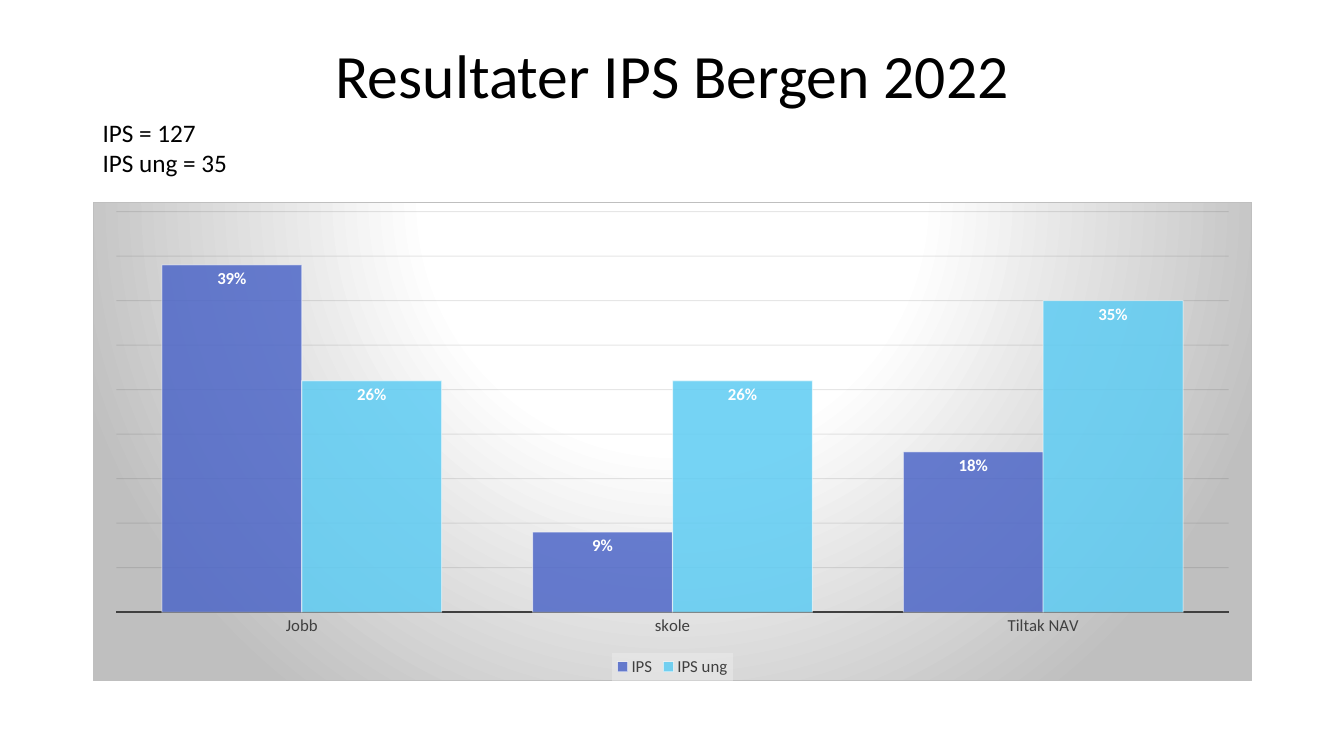
from lxml import etree
from pptx import Presentation
from pptx.chart.data import CategoryChartData
from pptx.dml.color import RGBColor
from pptx.enum.chart import (XL_CHART_TYPE, XL_LABEL_POSITION,
                             XL_LEGEND_POSITION, XL_TICK_LABEL_POSITION,
                             XL_TICK_MARK)
from pptx.enum.text import MSO_ANCHOR, PP_ALIGN
from pptx.oxml import parse_xml
from pptx.oxml.ns import nsdecls, qn
from pptx.util import Inches, Pt

FONT = "Calibri"
LEFT, WIDTH = 0.92, 11.5
CATEGORIES = ["Jobb", "skole", "Tiltak NAV"]
SERIES = [
    ("IPS", [0.39, 0.09, 0.18], "4E67C8"),
    ("IPS ung", [0.26, 0.26, 0.35], "5ECCF3"),
]


def rgb(color):
    return RGBColor.from_string(color)


def style_font(font, size, color, bold=False):
    font.name = FONT
    font.size = Pt(size)
    font.bold = bold
    font.color.rgb = rgb(color)


def style_line(line, color, width):
    line.color.rgb = rgb(color)
    line.width = Pt(width)


def set_opacity(element, *percentages):
    """Give the colours inside element, in order, their opacity."""
    for color, percent in zip(element.iter(qn("a:srgbClr")), percentages):
        etree.SubElement(color, qn("a:alpha")).set("val", str(percent * 1000))


def add_text(slide, box, lines, size, align=PP_ALIGN.LEFT, line_spacing=1.0):
    shape = slide.shapes.add_textbox(*(Inches(value) for value in box))
    frame = shape.text_frame
    frame.word_wrap = True
    frame.vertical_anchor = MSO_ANCHOR.TOP
    for index, line in enumerate(lines):
        paragraph = frame.add_paragraph() if index else frame.paragraphs[0]
        paragraph.alignment = align
        paragraph.line_spacing = line_spacing
        run = paragraph.add_run()
        run.text = line
        style_font(run.font, size, "000000")


def style_series(series, color):
    series.format.fill.solid()
    series.format.fill.fore_color.rgb = rgb(color)
    style_line(series.format.line, "FFFFFF", 0.75)
    set_opacity(series._element.find(qn("c:spPr")), 85, 50)
    labels = series.data_labels
    labels.show_value = True
    labels.position = XL_LABEL_POSITION.INSIDE_END
    labels.number_format = "0%"
    labels.number_format_is_linked = False
    style_font(labels.font, 12, "FFFFFF", bold=True)


def style_axes(chart):
    category_axis = chart.category_axis
    category_axis.major_tick_mark = XL_TICK_MARK.NONE
    category_axis.minor_tick_mark = XL_TICK_MARK.NONE
    category_axis.tick_label_position = XL_TICK_LABEL_POSITION.NEXT_TO_AXIS
    style_font(category_axis.tick_labels.font, 12, "404040")
    style_line(category_axis.format.line, "404040", 1.5)

    value_axis = chart.value_axis
    value_axis.visible = False
    value_axis.minimum_scale = 0
    value_axis.maximum_scale = 0.45
    value_axis.major_unit = 0.05
    value_axis.tick_labels.number_format = "0%"
    value_axis.tick_labels.number_format_is_linked = False
    value_axis.has_major_gridlines = True
    style_line(value_axis.major_gridlines.format.line, "0D0D0D", 0.75)
    set_opacity(value_axis._element.find(qn("c:majorGridlines")), 10)


def style_legend(chart):
    chart.has_legend = True
    legend = chart.legend
    legend.position = XL_LEGEND_POSITION.BOTTOM
    legend.include_in_layout = False
    style_font(legend.font, 12, "404040")
    background = parse_xml(
        f'<c:spPr {nsdecls("c", "a")}><a:solidFill><a:srgbClr val="F2F2F2"/>'
        '</a:solidFill></c:spPr>')
    set_opacity(background, 39)
    legend._element.find(qn("c:txPr")).addprevious(background)


def style_background(chart):
    stops = "".join(
        f'<a:gs pos="{position * 1000}"><a:srgbClr val="{color}"/></a:gs>'
        for position, color in [(0, "FFFFFF"), (39, "FFFFFF"), (100, "BFBFBF")])
    background = parse_xml(
        f'<c:spPr {nsdecls("c", "a")}><a:gradFill><a:gsLst>{stops}</a:gsLst>'
        '<a:path path="circle"><a:fillToRect l="50000" t="-80000" r="50000" '
        'b="180000"/></a:path></a:gradFill><a:ln w="9525"><a:solidFill>'
        '<a:srgbClr val="BFBFBF"/></a:solidFill></a:ln></c:spPr>')
    chart._chartSpace.find(qn("c:chart")).addnext(background)


def add_results_chart(slide, box):
    data = CategoryChartData(number_format="0%")
    data.categories = CATEGORIES
    for name, values, _ in SERIES:
        data.add_series(name, values)
    chart = slide.shapes.add_chart(
        XL_CHART_TYPE.COLUMN_CLUSTERED,
        *(Inches(value) for value in box), data).chart
    chart.has_title = False
    style_font(chart.font, 10, "000000")
    plot = chart.plots[0]
    plot.gap_width = 65
    plot.overlap = 0
    plot.vary_by_categories = False
    for series, (_, _, color) in zip(plot.series, SERIES):
        style_series(series, color)
    style_axes(chart)
    style_legend(chart)
    style_background(chart)


def main():
    presentation = Presentation()
    presentation.slide_width = Inches(13.33)
    presentation.slide_height = Inches(7.5)
    slide = presentation.slides.add_slide(presentation.slide_layouts[6])

    # Title
    add_text(slide, (LEFT, 0.4, WIDTH, 1.45), ["Resultater IPS Bergen 2022"],
             44, PP_ALIGN.CENTER, 0.9)
    # Chart of results
    add_results_chart(slide, (LEFT, 2, WIDTH, 4.76))
    # Number of participants
    add_text(slide, (LEFT, 1.11, 1.7, 0.71), ["IPS = 127", "IPS ung = 35"], 18)

    presentation.save("out.pptx")


if __name__ == "__main__":
    main()
